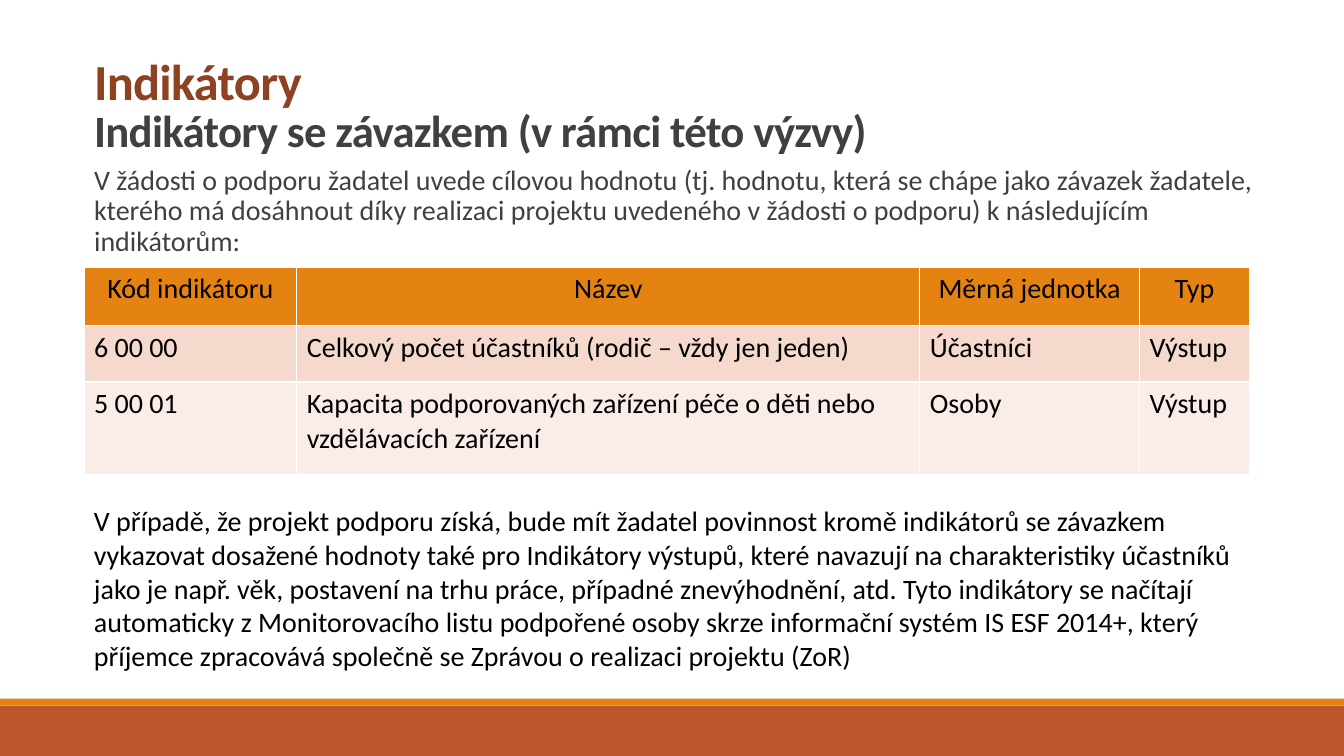
from dataclasses import dataclass

from lxml.etree import SubElement
from pptx import Presentation
from pptx.dml.color import RGBColor
from pptx.enum.shapes import MSO_SHAPE
from pptx.enum.text import MSO_ANCHOR, MSO_AUTO_SIZE, PP_ALIGN
from pptx.oxml.ns import qn
from pptx.util import Pt


@dataclass(frozen=True)
class Theme:
    font: str = "Calibri"
    heading: str = "8E4221"
    gray: str = "404040"
    black: str = "000000"
    orange: str = "E48312"
    rust: str = "BD582C"
    bands: tuple = ("E48312", "F5D9CC", "FAEDE7")
    title_size: int = 36
    subtitle_size: int = 32
    text_size: int = 20


def set_all(obj, **values):
    for name, value in values.items():
        setattr(obj, name, value)


def add_text(p, text, size, color, bold=False):
    r = p.add_run()
    r.text = text
    set_all(r.font, name=theme.font, size=Pt(size), bold=bold)
    r.font.color.rgb = RGBColor.from_string(color)
    return r


theme = Theme()
prs = Presentation()
set_all(prs, slide_width=Pt(960), slide_height=Pt(540))
slide = prs.slides.add_slide(prs.slide_layouts[1])
title, body = slide.placeholders

# Footer bands
for top, height, color in ((504, 36, theme.rust), (499, 5, theme.orange)):
    sp = slide.shapes.add_shape(MSO_SHAPE.RECTANGLE, 0, Pt(top), prs.slide_width, Pt(height))
    sp.shadow.inherit = False
    sp.fill.solid()
    sp.fill.fore_color.rgb = RGBColor.from_string(color)
    sp.line.fill.background()

# Title
set_all(title, left=Pt(60), top=Pt(31.7), width=Pt(789), height=Pt(83.5))
tf = title.text_frame
set_all(tf, vertical_anchor=MSO_ANCHOR.BOTTOM, auto_size=MSO_AUTO_SIZE.NONE, word_wrap=True)
p = tf.paragraphs[0]
set_all(p, alignment=PP_ALIGN.LEFT, line_spacing=0.85)
heading = add_text(p, "Indikátory", theme.title_size, theme.heading, True)
p.add_line_break()
subheading = add_text(p, "Indikátory se závazkem (v rámci této výzvy)",
                      theme.subtitle_size, theme.gray, True)
for r in (heading, subheading):
    r.font._element.set("spc", "-50")

# Introduction
set_all(body, left=Pt(60), top=Pt(115.2), width=Pt(851), height=Pt(75.6))
tf = body.text_frame
set_all(tf, margin_left=0, margin_right=0, margin_top=Pt(3.6), margin_bottom=Pt(3.6),
        vertical_anchor=MSO_ANCHOR.TOP, auto_size=MSO_AUTO_SIZE.NONE, word_wrap=True)
p = tf.paragraphs[0]
set_all(p, alignment=PP_ALIGN.LEFT, line_spacing=0.9, space_before=Pt(12), space_after=Pt(2))
pPr = p._p.get_or_add_pPr()
pPr.set("marL", str(Pt(7.2)))
pPr.set("indent", str(-Pt(7.2)))
SubElement(pPr, qn("a:buChar")).set("char", " ")
add_text(p, "V žádosti o podporu žadatel uvede cílovou hodnotu (tj. hodnotu, která se chápe "
            "jako závazek žadatele, kterého má dosáhnout díky realizaci projektu uvedeného "
            "v žádosti o podporu) k následujícím indikátorům:", theme.text_size, theme.gray)

# Indicators
rows = (
    ("Kód indikátoru", "Název", "Měrná jednotka", "Typ"),
    ("6 00 00", "Celkový počet účastníků (rodič – vždy jen jeden)", "Účastníci", "Výstup"),
    ("5 00 01", "Kapacita podporovaných zařízení péče o děti nebo vzdělávacích zařízení",
     "Osoby", "Výstup"),
)
col_widths = (152, 445, 157, 78.5)
row_heights = (41.8, 40.3, 66.2)
table = slide.shapes.add_table(len(rows), len(col_widths), Pt(60), Pt(190.8),
                               Pt(sum(col_widths)), Pt(sum(row_heights))).table
for col, width in zip(table.columns, col_widths):
    col.width = Pt(width)
for i, (texts, height, color) in enumerate(zip(rows, row_heights, theme.bands)):
    table.rows[i].height = Pt(height)
    for cell, text in zip(table.rows[i].cells, texts):
        cell.fill.solid()
        cell.fill.fore_color.rgb = RGBColor.from_string(color)
        p = cell.text_frame.paragraphs[0]
        p.alignment = PP_ALIGN.LEFT if i else PP_ALIGN.CENTER
        add_text(p, text, theme.text_size, theme.black)

# Closing note
note = slide.shapes.add_textbox(Pt(60), Pt(356.4), Pt(832.3), Pt(128.2))
tf = note.text_frame
set_all(tf, word_wrap=True, auto_size=MSO_AUTO_SIZE.SHAPE_TO_FIT_TEXT)
add_text(tf.paragraphs[0],
         "V případě, že projekt podporu získá, bude mít žadatel povinnost kromě indikátorů se "
         "závazkem vykazovat dosažené hodnoty také pro Indikátory výstupů, které navazují na "
         "charakteristiky účastníků jako je např. věk, postavení na trhu práce, případné "
         "znevýhodnění, atd. Tyto indikátory se načítají automaticky z Monitorovacího listu "
         "podpořené osoby skrze informační systém IS ESF 2014+, který příjemce zpracovává "
         "společně se Zprávou o realizaci projektu (ZoR)", theme.text_size, theme.black)

prs.save("out.pptx")
